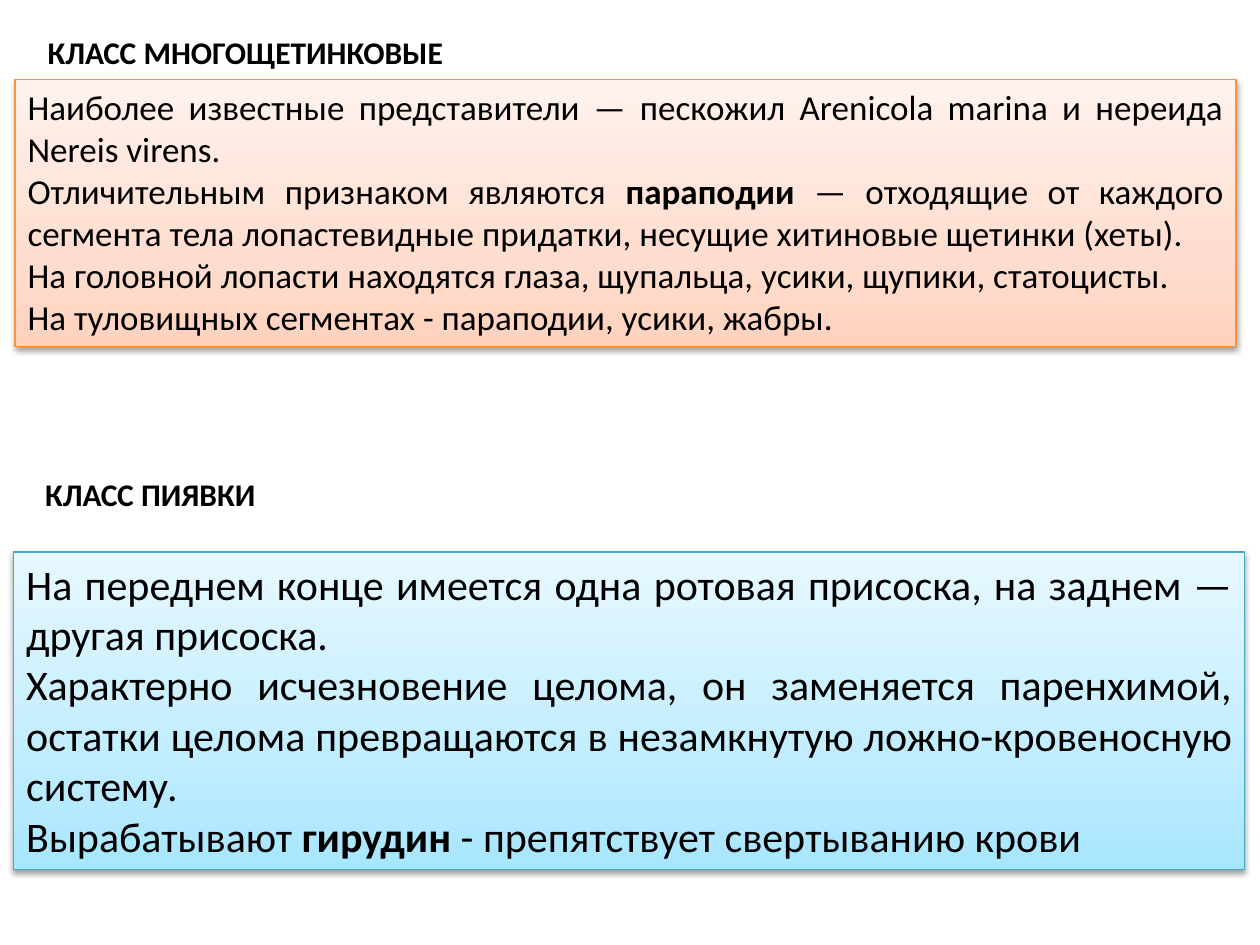
"""Build a slide on two classes of segmented worms."""
import pptx
import pptx.util
import pptx.oxml
import pptx.oxml.ns
import pptx.dml.color
import pptx.enum.shapes
import pptx.enum.text

Inches = pptx.util.Inches
Align = pptx.enum.text.PP_ALIGN

HEADS = [
    ("КЛАСС МНОГОЩЕТИНКОВЫЕ", (0.28, 0.21, 4.24, 0.4)),
    ("КЛАСС ПИЯВКИ", (0.26, 3.72, 2.22, 0.4)),
]
PANELS = [
    {
        "area": (0.12, 0.63, 9.69, 2.12),
        "size": 20,
        "line": "F69240",
        "stops": ("FFD2BD", "FFDED0", "FFF2ED"),
        "lines": [
            "Наиболее известные представители — пескожил Arenicola marina и нереида Nereis virens.",
            "Отличительным признаком являются |параподии| — отходящие от каждого сегмента тела "
            "лопастевидные придатки, несущие хитиновые щетинки (хеты).",
            "На головной лопасти находятся глаза, щупальца, усики, щупики, статоцисты.",
            "На туловищных сегментах - параподии, усики, жабры.",
        ],
    },
    {
        "area": (0.11, 4.38, 9.77, 2.52),
        "size": 24,
        "line": "46AAC5",
        "stops": ("A7E6FF", "C1EDFF", "E7F8FF"),
        "lines": [
            "На переднем конце имеется одна ротовая присоска, на заднем — другая присоска.",
            "Характерно исчезновение целома, он заменяется паренхимой, остатки целома "
            "превращаются в незамкнутую ложно-кровеносную систему.",
            "Вырабатывают |гирудин| - препятствует свертыванию крови",
        ],
    },
]
SHADE = (
    '<a:effectLst {ns}><a:outerShdw blurRad="39400" dist="20300" dir="5400000" rotWithShape="0">'
    '<a:srgbClr val="000000"><a:alpha val="38000"/></a:srgbClr></a:outerShdw></a:effectLst>'
)
BLEND = (
    '<a:gradFill {ns} rotWithShape="1"><a:gsLst>{stops}</a:gsLst>'
    '<a:lin ang="16200000" scaled="0"/></a:gradFill>'
)


def color(code):
    return pptx.dml.color.RGBColor.from_string(code)


def node(text, **parts):
    return pptx.oxml.parse_xml(text.format(ns=pptx.oxml.ns.nsdecls("a"), **parts))


def write(shape, lines, size=18, bold=False, align=Align.LEFT):
    frame = shape.text_frame
    frame.word_wrap = True
    frame.auto_size = pptx.enum.text.MSO_AUTO_SIZE.SHAPE_TO_FIT_TEXT
    frame.vertical_anchor = pptx.enum.text.MSO_ANCHOR.TOP
    for row, line in enumerate(lines):
        para = frame.add_paragraph() if row else frame.paragraphs[0]
        para.alignment = align
        for part, text in enumerate(line.split("|")):
            run = para.add_run()
            run.text = text
            font = run.font
            font.name = "Calibri"
            font.size = pptx.util.Pt(size)
            font.bold = bold or part % 2 == 1
            font.color.rgb = color("000000")


def panel(slide, area, size, line, stops, lines):
    kind = pptx.enum.shapes.MSO_SHAPE.RECTANGLE
    box = slide.shapes.add_shape(kind, *map(Inches, area))
    box.line.color.rgb = color(line)
    box.line.width = pptx.util.Pt(0.75)
    marks = "".join(
        f'<a:gs pos="{place * 1000}"><a:srgbClr val="{code}"/></a:gs>'
        for place, code in zip((0, 35, 100), stops)
    )
    props = box._element.spPr
    props.insert(2, node(BLEND, stops=marks))
    props.append(node(SHADE))
    write(box, lines, size=size, align=Align.JUSTIFY)


def main():
    deck = pptx.Presentation()
    deck.slide_width, deck.slide_height = Inches(10), Inches(7.5)
    slide = deck.slides.add_slide(deck.slide_layouts[6])
    for (text, area), data in zip(HEADS, PANELS):
        write(slide.shapes.add_textbox(*map(Inches, area)), [text], bold=True)
        panel(slide, **data)
    deck.save("out.pptx")


if __name__ == "__main__":
    main()
